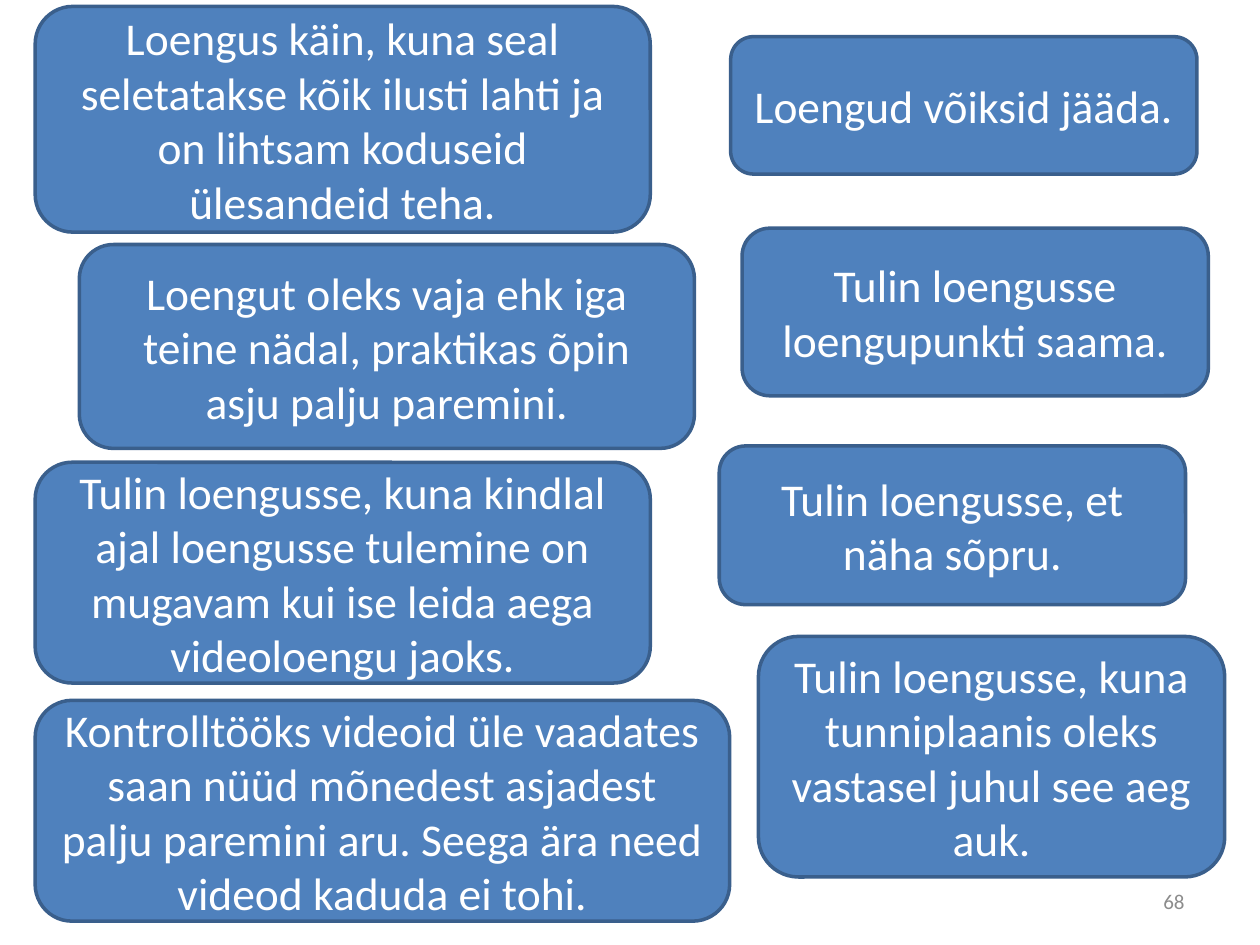
from dataclasses import dataclass

from pptx import Presentation
from pptx import util as u
from pptx.dml.color import RGBColor
from pptx.enum import shapes, text

FONT = "Calibri"
FILL, OUTLINE, WHITE, GREY = "4F81BD", "3A5F8C", "FFFFFF", "8C8C8C"
WIDE, NARROW = 12.4, 9.4  # widths of the left and right columns, cm


@dataclass
class Quote:
    words: str
    left: float
    top: float
    width: float
    height: float


QUOTES = [
    # Left column
    Quote("Loengus käin, kuna seal seletatakse kõik ilusti lahti ja on lihtsam "
          "koduseid ülesandeid teha.", 0.71, 0.13, WIDE, 4.55),
    Quote("Loengut oleks vaja ehk iga teine nädal, praktikas õpin asju palju "
          "paremini.", 1.6, 4.93, WIDE, 4.11),
    Quote("Tulin loengusse, kuna kindlal ajal loengusse tulemine on mugavam kui "
          "ise leida aega videoloengu jaoks.", 0.71, 9.32, WIDE, 4.45),
    Quote("Kontrolltööks videoid üle vaadates saan nüüd mõnedest asjadest palju "
          "paremini aru. Seega ära need videod kaduda ei tohi.",
          0.71, 14.12, 14, 4.45),
    # Right column
    Quote("Loengud võiksid jääda.", 14.73, 0.74, NARROW, 2.77),
    Quote("Tulin loengusse loengupunkti saama.", 14.96, 4.6, NARROW, 3.38),
    Quote("Tulin loengusse, et näha sõpru.", 14.5, 8.99, NARROW, 3.2),
    Quote("Tulin loengusse, kuna tunniplaanis oleks vastasel juhul see aeg auk.",
          15.29, 12.83, NARROW, 4.85),
]


def color(target, value: str) -> None:
    target.rgb = RGBColor.from_string(value)


def write(sp, words: str, size: float, ink: str, align) -> None:
    tf = sp.text_frame
    tf.word_wrap = True
    tf.vertical_anchor = text.MSO_ANCHOR.MIDDLE
    p = tf.paragraphs[0]
    p.alignment = align
    r = p.add_run()
    r.text = words
    for name, value in {"name": FONT, "size": u.Pt(size)}.items():
        setattr(r.font, name, value)
    color(r.font.color, ink)


def draw_quote(s, q: Quote) -> None:
    box = map(u.Cm, (q.left, q.top, q.width, q.height))
    sp = s.shapes.add_shape(shapes.MSO_SHAPE.ROUNDED_RECTANGLE, *box)
    sp.shadow.inherit = False
    sp.fill.solid()
    color(sp.fill.fore_color, FILL)
    color(sp.line.color, OUTLINE)
    sp.line.width = u.Pt(2)
    write(sp, q.words, 26, WHITE, text.PP_ALIGN.CENTER)


def main() -> None:
    prs = Presentation()
    prs.slide_width, prs.slide_height = u.Cm(25.4), u.Cm(19.05)
    s = prs.slides.add_slide(prs.slide_layouts[6])

    # Page number
    number = s.shapes.add_textbox(*map(u.Cm, (18.2, 17.66, 5.93, 1.01)))
    write(number, "68", 12, GREY, text.PP_ALIGN.RIGHT)

    # Student quotes
    for q in QUOTES:
        draw_quote(s, q)

    prs.save("out.pptx")


if __name__ == "__main__":
    main()
